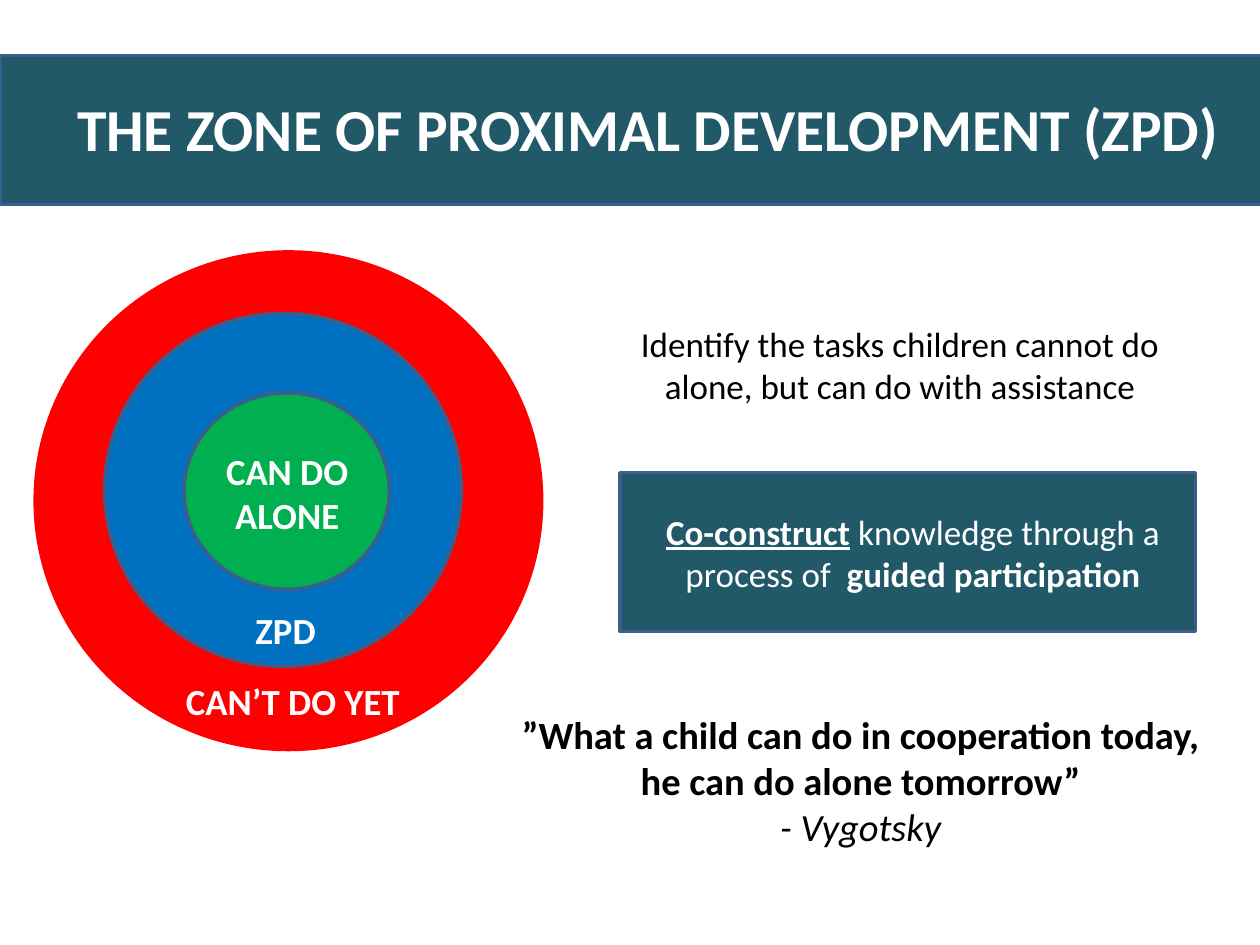
from pptx import Presentation
from pptx.dml.color import RGBColor
from pptx.enum.shapes import MSO_SHAPE
from pptx.enum.text import MSO_ANCHOR, MSO_AUTO_SIZE, PP_ALIGN
from pptx.util import Cm, Pt

TEAL = RGBColor(0x21, 0x59, 0x68)
OUTLINE = RGBColor(0x3A, 0x5F, 0x8C)
RED = RGBColor(0xFF, 0x00, 0x00)
BLUE = RGBColor(0x00, 0x70, 0xC0)
GREEN = RGBColor(0x00, 0xB0, 0x50)
WHITE = RGBColor(0xFF, 0xFF, 0xFF)
BLACK = RGBColor(0x00, 0x00, 0x00)

# Places are left, top, width, height in centimetres.
TITLE = "THE ZONE OF PROXIMAL DEVELOPMENT (ZPD)"
TITLE_PLACE = (1.3, 1.73, 23.7, 1.7)

PANELS = [
    (0, 1.12, 25.5, 3),
    (12.5, 9.53, 11.6, 3.2),
]
RINGS = [
    ((0.71, 5.08, 10.21, 10.03), RED, RED),
    ((2.11, 6.32, 7.19, 7.11), BLUE, OUTLINE),
    ((3.71, 7.92, 4.14, 3.96), GREEN, OUTLINE),
]
RING_LABELS = [
    ("CAN DO ALONE", (4.29, 8.92, 3, 2.06), PP_ALIGN.CENTER),
    ("ZPD", (4.9, 12.12, 3.2, 1.14), PP_ALIGN.LEFT),
    ("CAN’T DO YET", (3.5, 13.56, 5, 1.14), PP_ALIGN.LEFT),
]

# Each paragraph is a list of (text, styles) runs; styles: b, i, u.
TASKS = [[("Identify the tasks children cannot do alone, "
           "but can do with assistance", "")]]
PARTICIPATION = [[
    ("Co-construct", "bu"),
    (" knowledge through a process of  ", ""),
    ("guided participation", "b"),
]]
QUOTE = [
    [("”What a child can do in cooperation today,", "b")],
    [("he can do alone tomorrow”", "b")],
    [("- Vygotsky", "i")],
]


def add_panel(slide, kind, place, fill, line):
    shape = slide.shapes.add_shape(kind, *map(Cm, place))
    shape.shadow.inherit = False
    shape.fill.solid()
    shape.fill.fore_color.rgb = fill
    shape.line.color.rgb = line
    shape.line.width = Pt(2)


def write_text(shape, paragraphs, *, size, color, align=PP_ALIGN.CENTER):
    frame = shape.text_frame
    frame.word_wrap = True
    frame.auto_size = MSO_AUTO_SIZE.NONE
    frame.vertical_anchor = MSO_ANCHOR.TOP
    for index, runs in enumerate(paragraphs):
        paragraph = frame.add_paragraph() if index else frame.paragraphs[0]
        paragraph.alignment = align
        for text, styles in runs:
            run = paragraph.add_run()
            run.text = text
            font = run.font
            font.name = "Calibri"
            font.size = Pt(size)
            font.color.rgb = color
            font.bold = "b" in styles
            font.italic = "i" in styles
            font.underline = "u" in styles


def add_text(slide, place, paragraphs, **text_format):
    box = slide.shapes.add_textbox(*map(Cm, place))
    write_text(box, paragraphs, **text_format)


def main():
    presentation = Presentation()
    presentation.slide_width = Cm(25.4)
    presentation.slide_height = Cm(19.05)
    slide = presentation.slides.add_slide(presentation.slide_layouts[5])

    for place in PANELS:
        add_panel(slide, MSO_SHAPE.RECTANGLE, place, TEAL, OUTLINE)
    add_text(slide, (9.5, 14.2, 15.7, 3.07), QUOTE, size=22, color=BLACK)
    add_text(slide, (12.19, 6.37, 11.91, 1.96), TASKS, size=20, color=BLACK)

    for place, fill, line in RINGS:
        add_panel(slide, MSO_SHAPE.OVAL, place, fill, line)
    for label, place, align in RING_LABELS:
        add_text(slide, place, [[(label, "b")]], size=21, color=WHITE, align=align)
    add_text(slide, (12.5, 10.16, 11.81, 1.96), PARTICIPATION, size=20, color=WHITE)

    title = slide.shapes.title
    title.left, title.top, title.width, title.height = map(Cm, TITLE_PLACE)
    write_text(title, [[(TITLE, "b")]], size=34, color=WHITE, align=PP_ALIGN.LEFT)
    # The title comes first in the layout, so bring it in front of its banner.
    slide.shapes._spTree.append(title._element)

    presentation.save("out.pptx")


if __name__ == "__main__":
    main()
